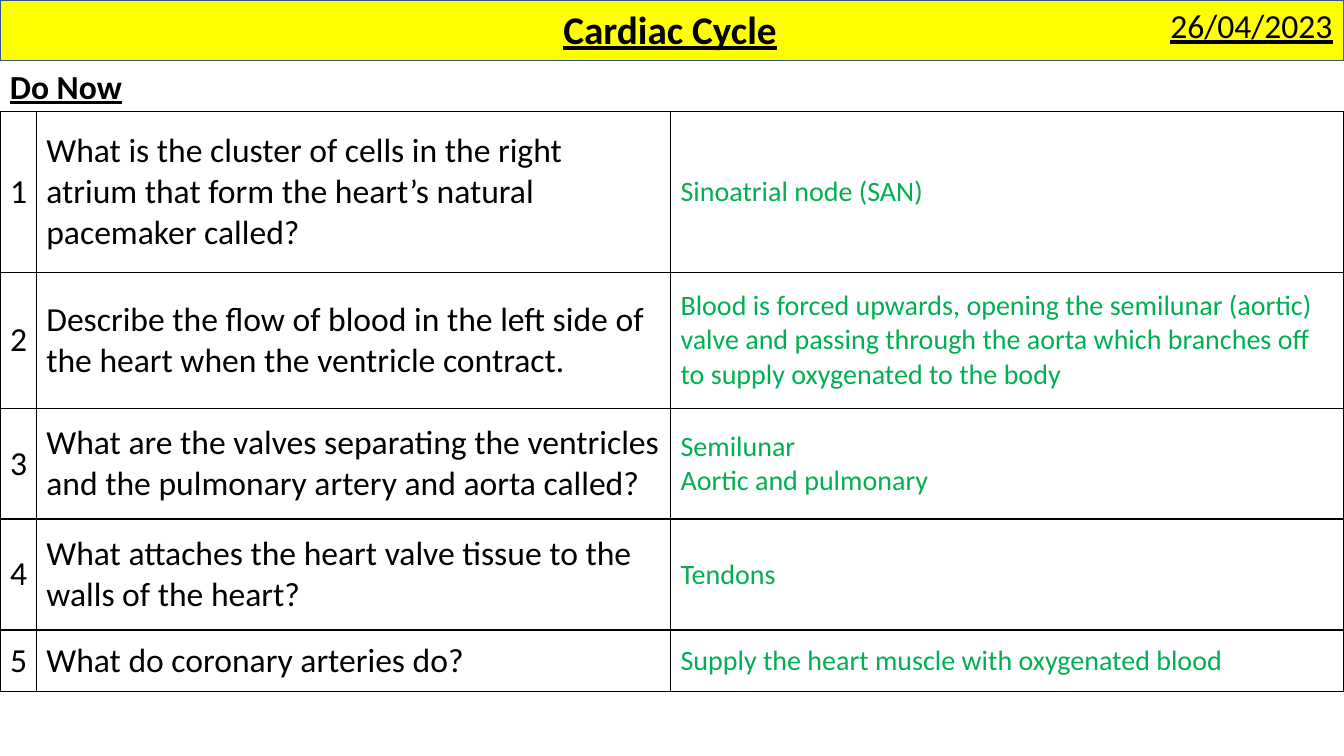
from lxml import etree
from pptx import Presentation
from pptx.dml.color import RGBColor
from pptx.enum import shapes, text
from pptx.oxml import ns
from pptx.util import Inches, Pt

BLACK = RGBColor(0x00, 0x00, 0x00)
GREEN = RGBColor(0x00, 0xB0, 0x50)
YELLOW = RGBColor(0xFF, 0xFF, 0x00)
BLUE = RGBColor(0x32, 0x54, 0x91)

WIDTHS = [0.36, 6.29, 6.68]
HEIGHTS = [1.59, 1.35, 1.1, 1.1, 0.61]
QUIZ = [
    ("What is the cluster of cells in the right atrium that form the heart’s natural pacemaker called?",
     "Sinoatrial node (SAN)"),
    ("Describe the flow of blood in the left side of the heart when the ventricle contract.",
     "Blood is forced upwards, opening the semilunar (aortic) valve and passing through the aorta "
     "which branches off to supply oxygenated to the body"),
    ("What are the valves separating the ventricles and the pulmonary artery and aorta called?",
     "Semilunar\nAortic and pulmonary"),
    ("What attaches the heart valve tissue to the walls of the heart?", "Tendons"),
    ("What do coronary arteries do?", "Supply the heart muscle with oxygenated blood"),
]


class Board:
    def __init__(self, slide, face="Calibri"):
        self.slide = slide
        self.face = face

    def letter(self, frame, words, size, color=BLACK, align=None, bold=None, under=None):
        frame.text = words
        for para in frame.paragraphs:
            para.alignment = align
            for run in para.runs:
                font = run.font
                font.name, font.size = self.face, Pt(size)
                font.bold, font.underline = bold, under
                font.color.rgb = color

    def banner(self, left, top, width, height):
        bar = self.slide.shapes.add_shape(
            shapes.MSO_SHAPE.RECTANGLE, *map(Inches, (left, top, width, height)))
        bar.shadow.inherit = False
        bar.fill.solid()
        bar.fill.fore_color.rgb = YELLOW
        bar.line.color.rgb = BLUE
        bar.line.width = Pt(1)

    def label(self, words, left, top, width, height, size=24, bold=None, wrap=False):
        box = self.slide.shapes.add_textbox(*map(Inches, (left, top, width, height)))
        frame = box.text_frame
        frame.word_wrap = wrap
        frame.auto_size = text.MSO_AUTO_SIZE.SHAPE_TO_FIT_TEXT
        self.letter(frame, words, size, bold=bold, under=True)

    def border(self, cell):
        props = cell._tc.get_or_add_tcPr()
        for spot, side in enumerate(("lnL", "lnR", "lnT", "lnB")):
            line = etree.Element(ns.qn(f"a:{side}"), w=str(Pt(1)))
            fill = etree.SubElement(line, ns.qn("a:solidFill"))
            etree.SubElement(fill, ns.qn("a:srgbClr"), val=str(BLACK))
            props.insert(spot, line)

    def table(self, rows, left, top, widths, heights):
        frame = self.slide.shapes.add_table(
            len(rows), len(widths),
            *map(Inches, (left, top, sum(widths), sum(heights))))
        grid = frame.table
        grid.first_row = grid.horz_banding = False
        for col, width in zip(grid.columns, widths):
            col.width = Inches(width)
        for row, height in zip(grid.rows, heights):
            row.height = Inches(height)
        looks = [(24, BLACK, text.PP_ALIGN.CENTER), (24, BLACK, None), (20, GREEN, None)]
        for row, items in zip(grid.rows, rows):
            for cell, words, look in zip(row.cells, items, looks):
                cell.vertical_anchor = text.MSO_ANCHOR.MIDDLE
                cell.fill.background()
                self.letter(cell.text_frame, words, *look)
                self.border(cell)


def main():
    deck = Presentation()
    deck.slide_width, deck.slide_height = Inches(13.33), Inches(7.5)
    board = Board(deck.slides.add_slide(deck.slide_layouts[6]))
    board.banner(0, 0, 13.33, 0.6)
    rows = [(str(num), *pair) for num, pair in enumerate(QUIZ, 1)]
    board.table(rows, 0, 1.11, WIDTHS, HEIGHTS)
    board.label("Do Now", 0, 0.6, 1.94, 0.5, bold=True, wrap=True)
    board.label("26/04/2023", 11.51, 0, 1.82, 0.5)
    board.label("Cardiac Cycle", 5.49, 0, 2.34, 0.57, size=28, bold=True)
    deck.save("out.pptx")


if __name__ == "__main__":
    main()
